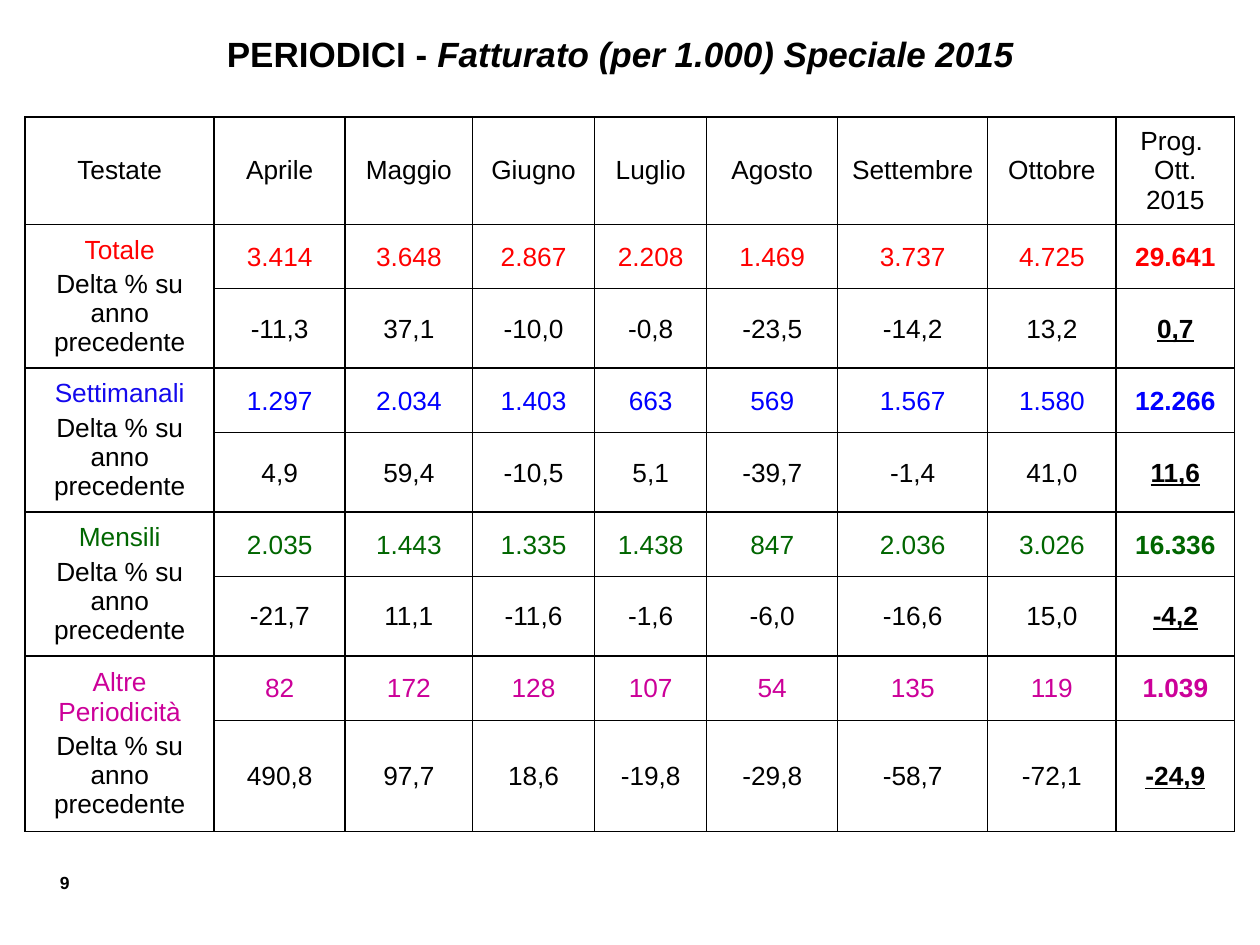
from lxml import etree
from pptx import Presentation
from pptx import util as u
from pptx.dml.color import RGBColor
from pptx.enum import text as t
from pptx.oxml import ns

BLACK = "000000"
DELTA = "Delta % su anno precedente"
HEADS = ["Testate", "Aprile", "Maggio", "Giugno", "Luglio", "Agosto",
         "Settembre", "Ottobre", "Prog. \nOtt. 2015"]
WIDTHS = [1.5, 1.04, 1.01, 0.97, 0.89, 1.04, 1.19, 1.02, 0.94]
HEIGHTS = [0.85] + [0.51, 0.63] * 3 + [0.51, 0.88]
GROUPS = [
    ("Totale", "FF0000", "FF0000",
     "3.414 3.648 2.867 2.208 1.469 3.737 4.725 29.641",
     "-11,3 37,1 -10,0 -0,8 -23,5 -14,2 13,2 0,7"),
    ("Settimanali", "1409ED", "0000FF",
     "1.297 2.034 1.403 663 569 1.567 1.580 12.266",
     "4,9 59,4 -10,5 5,1 -39,7 -1,4 41,0 11,6"),
    ("Mensili", "006600", "006600",
     "2.035 1.443 1.335 1.438 847 2.036 3.026 16.336",
     "-21,7 11,1 -11,6 -1,6 -6,0 -16,6 15,0 -4,2"),
    ("Altre Periodicità", "CC0099", "CC0099",
     "82 172 128 107 54 135 119 1.039",
     "490,8 97,7 18,6 -19,8 -29,8 -58,7 -72,1 -24,9"),
]
WIDE = (0.1, 0.05, 0.1, 0.05)
TIGHT = (0.01, 0.01, 0.01, 0)


def apply(item, **vals):
    """Set each named attribute on an item."""
    for key, val in vals.items():
        setattr(item, key, val)


def paint(color, code):
    """Set a colour from a hex string."""
    color.rgb = RGBColor.from_string(code)


def add_run(para, words, code=BLACK, size=15, **style):
    """Add one styled run to a paragraph."""
    run = para.add_run()
    run.text = words
    apply(run.font, **{"name": "Arial", "size": u.Pt(size), "bold": False, **style})
    paint(run.font.color, code)


def add_label(slide, box, align, runs):
    """Add a one-line text box made of styled runs."""
    frame = slide.shapes.add_textbox(*map(u.Inches, box)).text_frame
    frame.word_wrap = True
    para = frame.paragraphs[0]
    para.alignment = align
    for words, style in runs:
        add_run(para, words, **style)


def add_edges(cell):
    """Draw a thin black border on all four sides of a cell."""
    props = cell._tc.get_or_add_tcPr()
    for side in ("lnL", "lnR", "lnT", "lnB"):
        line = etree.SubElement(props, ns.qn("a:" + side), w=str(u.Pt(1)))
        fill = etree.SubElement(line, ns.qn("a:solidFill"))
        etree.SubElement(fill, ns.qn("a:srgbClr"), val=BLACK)


def fill_cell(cell, lines, inset=TIGHT, gap=0, **style):
    """Write centred lines, given as text and colour pairs, into a cell."""
    sides = ("margin_left", "margin_top", "margin_right", "margin_bottom")
    apply(cell, vertical_anchor=t.MSO_ANCHOR.MIDDLE,
          **dict(zip(sides, map(u.Inches, inset))))
    frame = cell.text_frame
    for num, (words, code) in enumerate(lines):
        para = frame.add_paragraph() if num else frame.paragraphs[0]
        para.alignment = t.PP_ALIGN.CENTER
        if num and gap:
            para.space_before = u.Pt(gap)
        add_run(para, words, code, **style)


def add_grid(slide):
    """Add the empty bordered table."""
    rows, cols = len(HEIGHTS), len(WIDTHS)
    box = map(u.Inches, (0.2, 0.93, sum(WIDTHS), sum(HEIGHTS)))
    table = slide.shapes.add_table(rows, cols, *box).table
    apply(table, first_row=False, horz_banding=False)
    for col, width in zip(table.columns, WIDTHS):
        col.width = u.Inches(width)
    for row, height in zip(table.rows, HEIGHTS):
        row.height = u.Inches(height)
    for cell in table.iter_cells():
        add_edges(cell)
        cell.fill.background()
    return table


def fill_row(table, row, values, code, under):
    """Write a row of figures whose last one is bold."""
    last = len(WIDTHS) - 1
    for col, value in enumerate(values.split(), 1):
        total = col == last
        fill_cell(table.cell(row, col), [(value, code)],
                  bold=total, underline=total and under)


def fill_table(table):
    """Write the header and the two rows of each group."""
    for col, head in enumerate(HEADS):
        inset = WIDE if col else (0.05,) * 4
        lines = [(words, BLACK) for words in head.split("\n")]
        fill_cell(table.cell(0, col), lines, inset)
    for num, (name, tint, code, sums, deltas) in enumerate(GROUPS):
        row = 1 + 2 * num
        cell = table.cell(row, 0)
        cell.merge(table.cell(row + 1, 0))
        fill_cell(cell, [(name, tint), (DELTA, BLACK)], WIDE, gap=3)
        fill_row(table, row, sums, code, False)
        fill_row(table, row + 1, deltas, BLACK, True)


def main():
    """Build and save the slide."""
    deck = Presentation()
    apply(deck, slide_width=u.Inches(10), slide_height=u.Inches(7.5))
    slide = deck.slides.add_slide(deck.slide_layouts[6])
    add_label(slide, (0.19, 6.87, 0.46, 0.27), t.PP_ALIGN.RIGHT,
              [("9", {"size": 10, "bold": True})])
    fill_table(add_grid(slide))
    title = {"size": 20, "bold": True}
    add_label(slide, (0.2, 0.21, 9.45, 0.44), t.PP_ALIGN.CENTER,
              [("PERIODICI - ", title),
               ("Fatturato (per 1.000) Speciale 2015", {**title, "italic": True})])
    deck.save("out.pptx")


if __name__ == "__main__":
    main()
